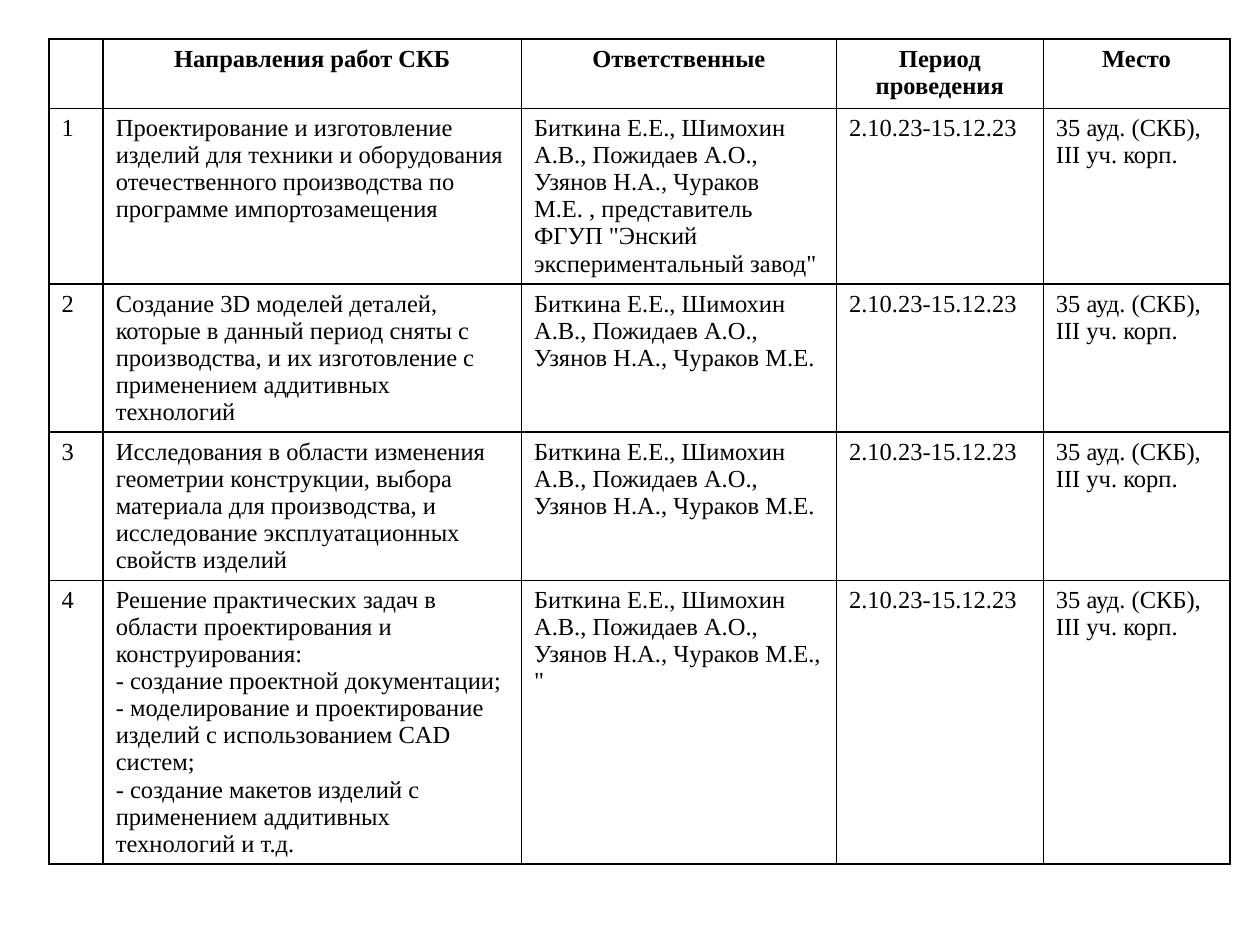
from dataclasses import dataclass

from lxml.etree import SubElement as Sub
from pptx import Presentation
from pptx.dml.color import RGBColor as Rgb
from pptx.enum.text import PP_ALIGN as Align
from pptx.oxml.ns import qn
from pptx.table import Table, _Cell as Cell
from pptx.util import Pt

INK = {"text": "000000", "line": "000000"}
FONT = "Times New Roman"
WIDTHS = (31, 239, 180, 118.2, 106.6)
HEADS = ("", "Направления работ СКБ", "Ответственные", "Период проведения", "Место")
STAFF = "Биткина Е.Е., Шимохин А.В., Пожидаев А.О., Узянов Н.А., Чураков М.Е."
DATES = "2.10.23-15.12.23"
PLACE = "35 ауд. (СКБ), III уч. корп."


@dataclass
class Task:
    topic: str
    height: float
    extra: str = ""


TASKS = (
    Task("Проектирование и изготовление изделий для техники и оборудования "
         "отечественного производства по программе импортозамещения",
         100.4, ' , представитель ФГУП "Энский экспериментальный завод"'),
    Task("Создание 3D моделей деталей, которые в данный период сняты с производства, "
         "и их изготовление с применением аддитивных технологий", 84.6),
    Task("Исследования в области изменения геометрии конструкции, выбора материала "
         "для производства, и исследование эксплуатационных свойств изделий", 84.6),
    Task("Решение практических задач в области проектирования и конструирования:\n"
         "- создание проектной документации;\n"
         "- моделирование и проектирование изделий с использованием CAD систем;\n"
         "- создание макетов изделий с применением аддитивных технологий и т.д.",
         162, ', "'),
)


def edge(cell: Cell) -> None:
    """Draw a thin line on all four sides of a cell."""
    props = cell._tc.get_or_add_tcPr()
    for side in ("lnL", "lnR", "lnT", "lnB"):
        line = Sub(props, qn(f"a:{side}"), w=str(Pt(1)))
        fill = Sub(line, qn("a:solidFill"))
        Sub(fill, qn("a:srgbClr"), val=INK["line"])


def write(cell: Cell, text: str, head: bool) -> None:
    """Fill a cell with styled text."""
    edge(cell)
    cell.fill.background()
    cell.text = text
    for para in cell.text_frame.paragraphs:
        para.alignment = Align.CENTER if head else Align.LEFT
        font = para.font
        font.name, font.size, font.bold = FONT, Pt(14), head
        font.color.rgb = Rgb.from_string(INK["text"])


def fill_row(table: Table, row: int, texts: tuple[str, ...], height: float) -> None:
    """Set the height and the cells of one row."""
    table.rows[row].height = Pt(height)
    for col, text in enumerate(texts):
        write(table.cell(row, col), text, row == 0)


def main() -> None:
    """Build the work plan slide."""
    deck = Presentation()
    deck.slide_width, deck.slide_height = Pt(720), Pt(540)
    slide = deck.slides.add_slide(deck.slide_layouts[6])
    high = 39.6 + sum(task.height for task in TASKS)
    frame = slide.shapes.add_table(len(TASKS) + 1, len(WIDTHS), Pt(28), Pt(22.4),
                                   Pt(sum(WIDTHS)), Pt(high))
    table = frame.table
    table.first_row = table.horz_banding = False
    for col, width in zip(table.columns, WIDTHS):
        col.width = Pt(width)
    fill_row(table, 0, HEADS, 39.6)
    for num, task in enumerate(TASKS, 1):
        texts = (str(num), task.topic, STAFF + task.extra, DATES, PLACE)
        fill_row(table, num, texts, task.height)
    deck.save("out.pptx")


if __name__ == "__main__":
    main()
